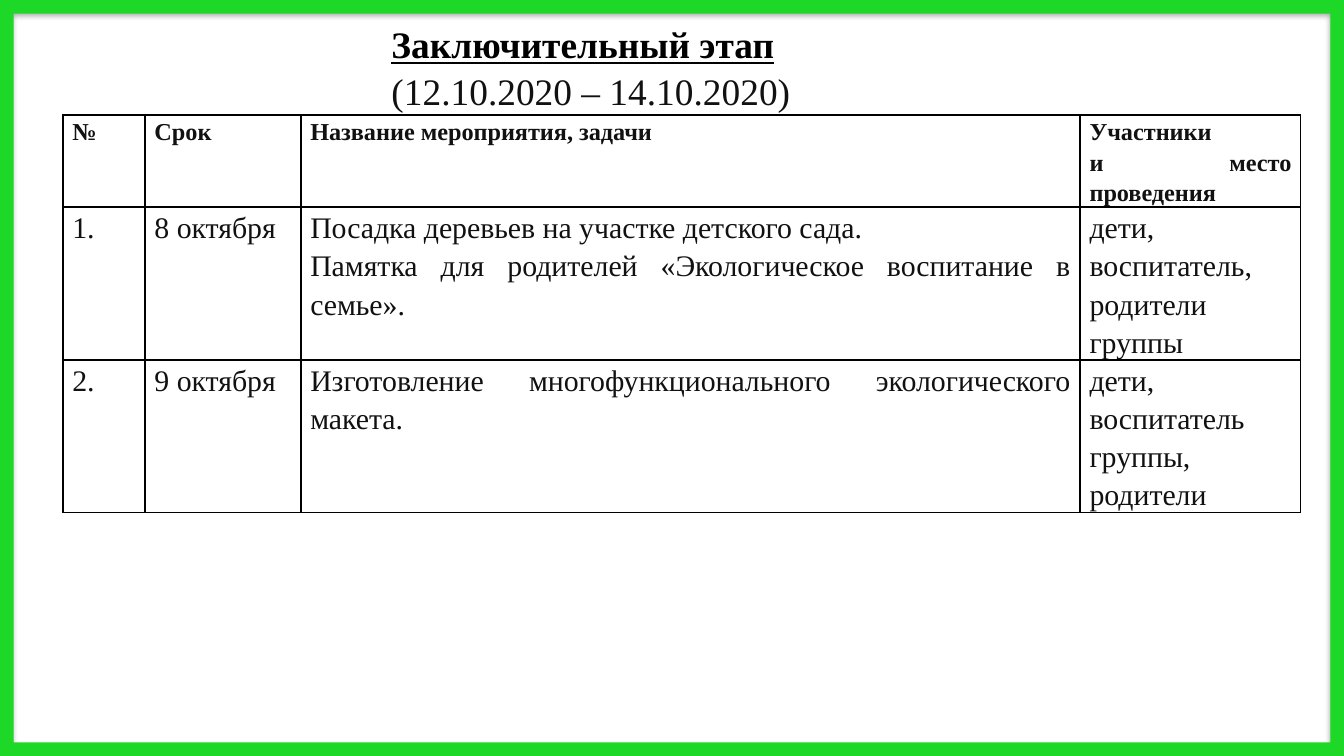
from dataclasses import dataclass

from lxml import etree
from pptx import Presentation
from pptx.dml.color import RGBColor
from pptx.enum.shapes import MSO_SHAPE
from pptx.enum.text import MSO_ANCHOR, PP_ALIGN
from pptx.oxml.ns import qn
from pptx.util import Pt

FRAME = MSO_SHAPE.FRAME
MIDDLE = MSO_ANCHOR.MIDDLE
LEFT = PP_ALIGN.LEFT
JUSTIFY = PP_ALIGN.JUSTIFY

GREEN = RGBColor(0x1E, 0xD8, 0x27)
BLACK = RGBColor(0, 0, 0)
INK = RGBColor(0x11, 0x11, 0x11)
FACE = "Times New Roman"
WIDE, HIGH = 720, 405


@dataclass
class Line:
    text: str
    size: float
    color: RGBColor = INK
    bold: bool = False
    under: bool = False


@dataclass
class Row:
    height: float
    size: float
    bold: bool
    cells: list[list[str]]


HEAD = [
    Line("Заключительный этап", 20, BLACK, True, True),
    Line("(12.10.2020 – 14.10.2020)", 20),
]
COLS = [44, 83.5, 417.5, 118]
ROWS = [
    Row(49, 13, True, [
        ["№"], ["Срок"], ["Название мероприятия, задачи"],
        ["Участники", "и место проведения"],
    ]),
    Row(81.5, 16, False, [
        ["1."], ["8 октября"],
        ["Посадка деревьев на участке детского сада.",
         "Памятка для родителей «Экологическое воспитание в семье»."],
        ["дети, воспитатель, родители", "группы"],
    ]),
    Row(81.5, 16, False, [
        ["2."], ["9 октября"],
        ["Изготовление многофункционального экологического макета."],
        ["дети, воспитатель", "группы, родители"],
    ]),
]


def write(frame, lines: list[Line], align, space: float) -> None:
    for i, line in enumerate(lines):
        para = frame.paragraphs[0] if i == 0 else frame.add_paragraph()
        para.alignment = align
        para.line_spacing = space
        para.space_before = para.space_after = Pt(0)
        run = para.add_run()
        run.text = line.text
        look = {"name": FACE, "size": Pt(line.size),
                "bold": line.bold, "underline": line.under}
        for key, value in look.items():
            setattr(run.font, key, value)
        run.font.color.rgb = line.color


def paint(node, color: RGBColor):
    tone = etree.SubElement(node, qn("a:srgbClr"), val=str(color))
    return tone


def edge(cell) -> None:
    props = cell._tc.get_or_add_tcPr()
    for side in ("lnL", "lnR", "lnT", "lnB"):
        line = etree.SubElement(props, qn(f"a:{side}"), w=str(Pt(1)))
        paint(etree.SubElement(line, qn("a:solidFill")), BLACK)


def border(slide) -> None:
    shape = slide.shapes.add_shape(FRAME, 0, 0, Pt(WIDE), Pt(HIGH))
    shape.adjustments[0] = 0.018
    shape.fill.solid()
    shape.fill.fore_color.rgb = GREEN
    shape.line.fill.background()
    shape.shadow.inherit = False
    effects = shape._element.spPr.find(qn("a:effectLst"))
    shade = etree.SubElement(
        effects, qn("a:outerShdw"), blurRad=str(Pt(3.1)),
        dist=str(Pt(1.8)), dir="5400000", rotWithShape="0")
    etree.SubElement(paint(shade, BLACK), qn("a:alpha"), val="35000")


def title(slide) -> None:
    shape = slide.shapes.title
    place = {"left": 202.5, "top": 9.5, "width": 354, "height": 52}
    for key, value in place.items():
        setattr(shape, key, Pt(value))
    frame = shape.text_frame
    frame.word_wrap = True
    frame.vertical_anchor = MIDDLE
    frame.margin_top = frame.margin_bottom = 0
    write(frame, HEAD, LEFT, 1.05)


def grid(slide) -> None:
    table = slide.shapes.add_table(
        len(ROWS), len(COLS), Pt(33.75), Pt(61.75), Pt(sum(COLS)),
        Pt(sum(row.height for row in ROWS))).table
    table.first_row = table.horz_banding = False
    for col, width in zip(table.columns, COLS):
        col.width = Pt(width)
    pad = {"margin_left": Pt(5), "margin_right": Pt(5),
           "margin_top": 0, "margin_bottom": 0}
    for r, row in enumerate(ROWS):
        table.rows[r].height = Pt(row.height)
        for c, texts in enumerate(row.cells):
            cell = table.cell(r, c)
            for key, value in pad.items():
                setattr(cell, key, value)
            edge(cell)
            cell.fill.background()
            lines = [Line(text, row.size, bold=row.bold) for text in texts]
            write(cell.text_frame, lines, JUSTIFY, 1.15)


def main() -> None:
    deck = Presentation()
    deck.slide_width, deck.slide_height = Pt(WIDE), Pt(HIGH)
    slide = deck.slides.add_slide(deck.slide_layouts[5])
    border(slide)
    grid(slide)
    title(slide)
    deck.save("out.pptx")


if __name__ == "__main__":
    main()
